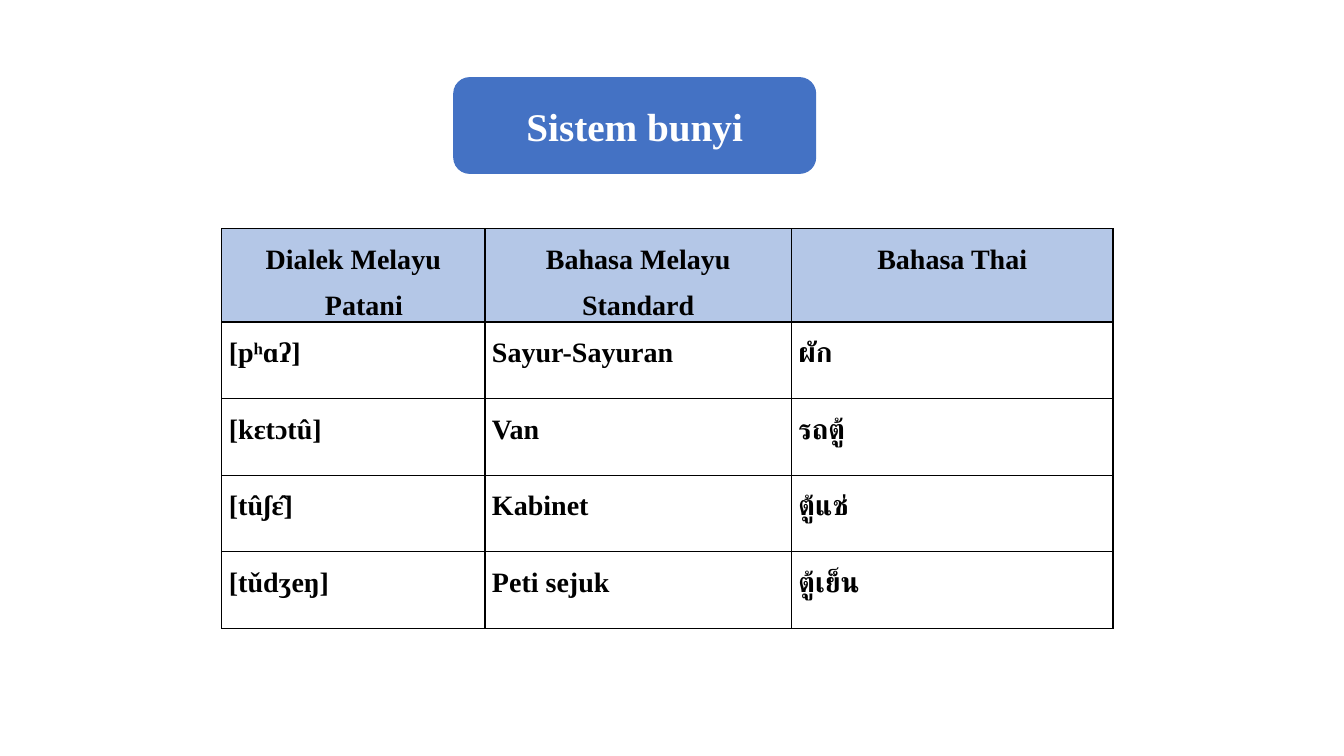
from lxml.etree import SubElement
from pptx import Presentation
from pptx.dml.color import RGBColor
from pptx.enum.shapes import MSO_SHAPE as Shape
from pptx.enum.text import MSO_ANCHOR as Anchor, PP_ALIGN as Align
from pptx.oxml import parse_xml
from pptx.oxml.ns import nsdecls, qn
from pptx.util import Inches, Pt

THEME = {
    "font": "Times New Roman",
    "title_size": 28,
    "table_size": 20,
    "title_fill": "4472C4",
    "title_text": "FFFFFF",
    "header_fill": "B4C7E7",
    "table_text": "000000",
    "border": "000000",
}


def write_text(para, text, size, color):
    span = para.add_run()
    span.text = text
    for name, value in {"name": THEME["font"], "size": Pt(size), "bold": True}.items():
        setattr(span.font, name, value)
    span.font.color.rgb = RGBColor.from_string(color)
    # Thai words take the complex-script font
    SubElement(span.font._element, qn("a:cs"), typeface=THEME["font"])


def add_borders(cell):
    properties = cell._tc.get_or_add_tcPr()
    for side in ("lnL", "lnR", "lnT", "lnB"):
        properties.append(parse_xml(
            f'<a:{side} {nsdecls("a")} w="{Pt(1)}"><a:solidFill>'
            f'<a:srgbClr val="{THEME["border"]}"/></a:solidFill></a:{side}>'))


deck = Presentation()
deck.slide_width = Inches(13.33)
deck.slide_height = Inches(7.5)
page = deck.slides.add_slide(deck.slide_layouts[6])

# Title
title = page.shapes.add_shape(
    Shape.ROUNDED_RECTANGLE, Inches(4.5), Inches(0.77), Inches(3.59), Inches(0.95))
title.shadow.inherit = False
title.fill.solid()
title.fill.fore_color.rgb = RGBColor.from_string(THEME["title_fill"])
title.line.color.rgb = RGBColor.from_string(THEME["title_fill"])
title.text_frame.vertical_anchor = Anchor.MIDDLE
title_para = title.text_frame.paragraphs[0]
title_para.alignment = Align.CENTER
write_text(title_para, "Sistem bunyi", THEME["title_size"], THEME["title_text"])

# Table of words in the three languages
words = [
    ("Dialek Melayu Patani", "Bahasa Melayu Standard", "Bahasa Thai"),
    ("[pʰɑʔ]", "Sayur-Sayuran", "ผัก"),
    ("[kɛtɔtû]", "Van", "รถตู้"),
    ("[tûʃɛ̂]", "Kabinet", "ตู้แช่"),
    ("[tǔdʒeŋ]", "Peti sejuk", "ตู้เย็น"),
]
column_widths = [2.61, 3.04, 3.19]
row_heights = [0.92] + [0.76] * 4
table = page.shapes.add_table(
    len(words), len(column_widths), Inches(2.2), Inches(2.27),
    Inches(sum(column_widths)), Inches(sum(row_heights))).table
table.horz_banding = False
for column, width in zip(table.columns, column_widths):
    column.width = Inches(width)
for row, height in zip(table.rows, row_heights):
    row.height = Inches(height)

cell_margins = {"margin_left": 0.07, "margin_right": 0.07,
                "margin_top": 0, "margin_bottom": 0}
for row_index, row_words in enumerate(words):
    for column_index, word in enumerate(row_words):
        cell = table.cell(row_index, column_index)
        for name, value in cell_margins.items():
            setattr(cell, name, Inches(value))
        add_borders(cell)
        para = cell.text_frame.paragraphs[0]
        para.line_spacing = 1.5
        if row_index == 0:
            para.alignment = Align.CENTER
            cell.fill.solid()
            cell.fill.fore_color.rgb = RGBColor.from_string(THEME["header_fill"])
        else:
            para.alignment = Align.LEFT
            cell.fill.background()
        write_text(para, word, THEME["table_size"], THEME["table_text"])

# Hanging indent of the first heading
first_heading = table.cell(0, 0).text_frame.paragraphs[0]._p.get_or_add_pPr()
first_heading.set("marL", str(Inches(0.21)))
first_heading.set("indent", str(Inches(-0.3)))

deck.save("out.pptx")
